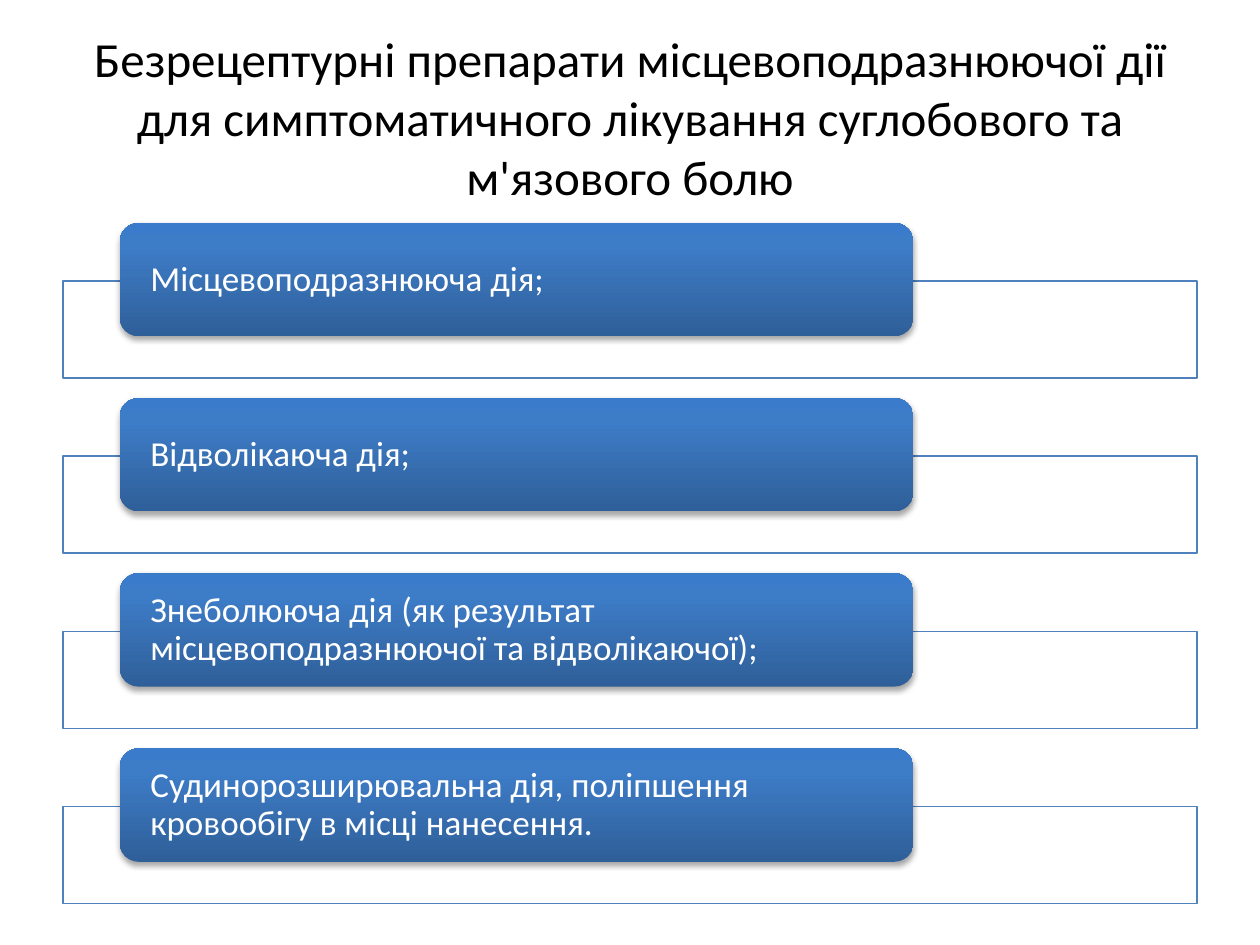
from copy import deepcopy

from lxml import etree
from pptx import Presentation
from pptx import util as u
from pptx.dml.color import RGBColor
from pptx.enum import shapes, text
from pptx.oxml import ns

TITLE = ("Безрецептурні препарати місцевоподразнюючої дії для симптоматичного "
         "лікування суглобового та м'язового болю")
ACTIONS = [
    "Місцевоподразнююча дія;",
    "Відволікаюча дія;",
    "Знеболююча дія (як результат місцевоподразнюючої та відволікаючої);",
    "Судинорозширювальна дія, поліпшення кровообігу в місці нанесення.",
]
GRADIENT = [(0, "2F5F99"), (0.8, "3D7CC7"), (1, "3A7CCB")]
FIRST_TOP, STEP = 1.77, 1.39


def color(value):
    return RGBColor.from_string(value)


def write(shape, words, size, ink, align):
    """Fill the shape with one vertically centred, wrapped paragraph."""
    frame = shape.text_frame
    frame.word_wrap = True
    frame.vertical_anchor = text.MSO_ANCHOR.MIDDLE
    para = frame.paragraphs[0]
    para.alignment = align
    span = para.add_run()
    span.text = words
    span.font.name = "Calibri"
    span.font.size = u.Pt(size)
    span.font.color.rgb = color(ink)
    return para


deck = Presentation()
deck.slide_width, deck.slide_height = u.Inches(10), u.Inches(7.5)
page = deck.slides.add_slide(deck.slide_layouts[6])

title = page.shapes.add_textbox(u.Inches(0.5), u.Inches(0.3), u.Inches(9), u.Inches(1.25))
write(title, TITLE, 28, "000000", text.PP_ALIGN.CENTER)

for row, action in enumerate(ACTIONS):
    top = FIRST_TOP + row * STEP

    panel = page.shapes.add_shape(shapes.MSO_SHAPE.RECTANGLE, u.Inches(0.5),
                                  u.Inches(top + 0.46), u.Inches(9), u.Inches(0.77))
    panel.shadow.inherit = False
    panel.fill.solid()
    panel.fill.fore_color.rgb = color("FFFFFF")
    panel_color = panel.element.spPr.find(ns.qn("a:solidFill"))[0]
    etree.SubElement(panel_color, ns.qn("a:alpha"), val="90000")
    panel.line.color.rgb = color("4F81BD")
    panel.line.width = u.Pt(0.75)

    box = page.shapes.add_shape(shapes.MSO_SHAPE.ROUNDED_RECTANGLE, u.Inches(0.95),
                                u.Inches(top), u.Inches(6.3), u.Inches(0.9))
    box.line.fill.background()
    box.fill.gradient()
    box.fill.gradient_angle = 90
    stops = box.element.spPr.find(ns.qn("a:gradFill")).find(ns.qn("a:gsLst"))
    stops.append(deepcopy(stops[0]))
    for stop, (position, shade) in zip(box.fill.gradient_stops, GRADIENT):
        stop.position = position
        stop.color.rgb = color(shade)

    box.shadow.inherit = False
    effects = box.element.spPr.find(ns.qn("a:effectLst"))
    shadow = etree.SubElement(effects, ns.qn("a:outerShdw"), blurRad=str(u.Pt(3.1)),
                              dist=str(u.Pt(1.8)), dir="5400000", rotWithShape="0")
    black = etree.SubElement(shadow, ns.qn("a:srgbClr"), val="000000")
    etree.SubElement(black, ns.qn("a:alpha"), val="35000")

    para = write(box, action, 20, "FFFFFF", text.PP_ALIGN.LEFT)
    para.line_spacing = 0.9
    frame = box.text_frame
    frame.margin_left = frame.margin_right = u.Inches(0.2)
    frame.margin_top = frame.margin_bottom = 0

deck.save("out.pptx")
